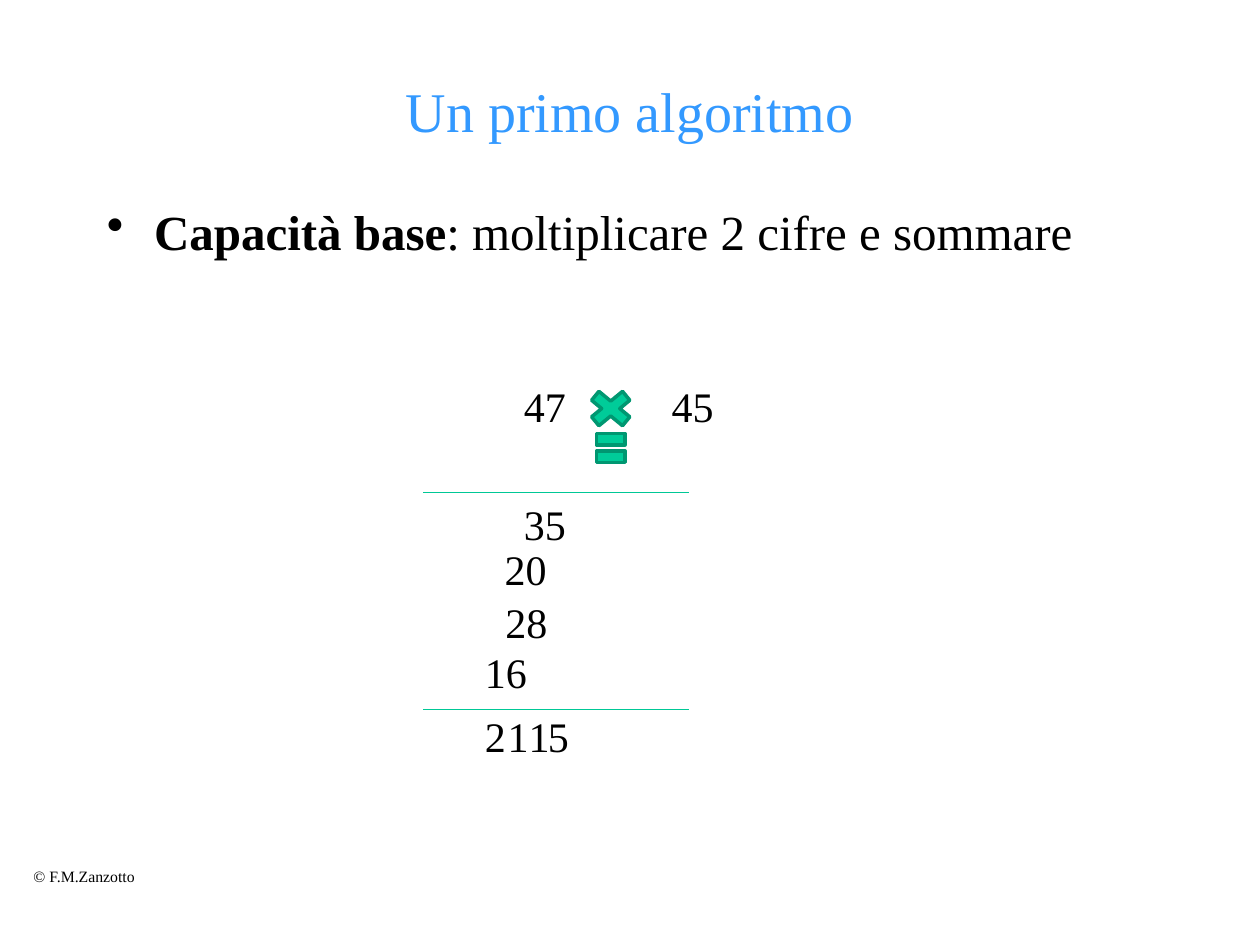
"""Build a slide that works through a long multiplication."""
from dataclasses import dataclass

from lxml import etree
from pptx import Presentation
from pptx.dml.color import RGBColor
from pptx.enum import shapes, text
from pptx.oxml import ns
from pptx.util import Pt


@dataclass(frozen=True)
class Theme:
    face: str = "Times New Roman"
    ink: str = "000000"
    head: str = "3399FF"
    fill: str = "00CC99"
    edge: str = "009771"
    rule: str = "00C896"
    title: int = 32
    body: int = 28
    digit: int = 24
    foot: int = 9


THEME = Theme()


def paint(font, size, tint=THEME.ink):
    font.name = THEME.face
    font.size = Pt(size)
    font.color.rgb = RGBColor.from_string(tint)


def add_title(slide, words):
    title = slide.shapes.title
    title.left, title.top, title.width, title.height = map(Pt, (54, 36, 612, 54))
    frame = title.text_frame
    frame.text = words
    frame.auto_size = text.MSO_AUTO_SIZE.NONE
    frame.vertical_anchor = text.MSO_ANCHOR.MIDDLE
    para = frame.paragraphs[0]
    para.alignment = text.PP_ALIGN.CENTER
    paint(para.font, THEME.title, THEME.head)


def add_bullet(slide, lead, rest):
    frame = slide.shapes.add_textbox(*map(Pt, (54, 108, 612, 55.5))).text_frame
    frame.word_wrap = True
    frame.margin_top = Pt(7)
    para = frame.paragraphs[0]
    props = para._p.get_or_add_pPr()
    props.set("marL", str(Pt(27)))
    props.set("indent", str(Pt(-27)))
    etree.SubElement(props, ns.qn("a:buChar")).set("char", "•")
    paint(para.font, THEME.body)
    for words, bold in ((lead, True), (rest, False)):
        run = para.add_run()
        run.text = words
        run.font.bold = bold


def add_label(slide, words, left, top, width, height=36, size=THEME.digit):
    frame = slide.shapes.add_textbox(*map(Pt, (left, top, width, height))).text_frame
    frame.word_wrap = False
    frame.auto_size = text.MSO_AUTO_SIZE.SHAPE_TO_FIT_TEXT
    frame.text = words
    paint(frame.paragraphs[0].font, size)


def add_rule(slide, top):
    line = slide.shapes.add_connector(
        shapes.MSO_CONNECTOR.STRAIGHT, *map(Pt, (242, top, 394, top)))
    line.line.color.rgb = RGBColor.from_string(THEME.rule)
    line.line.width = Pt(0.75)
    etree.SubElement(line._element.spPr, ns.qn("a:effectLst"))


def add_sign(slide, kind, left, top, width):
    sign = slide.shapes.add_shape(kind, *map(Pt, (left, top, width, 28)))
    sign.shadow.inherit = False
    sign.fill.solid()
    sign.fill.fore_color.rgb = RGBColor.from_string(THEME.fill)
    sign.line.color.rgb = RGBColor.from_string(THEME.edge)
    sign.line.width = Pt(2)


def main():
    deck = Presentation()
    deck.slide_width, deck.slide_height = Pt(720), Pt(540)
    slide = deck.slides.add_slide(deck.slide_layouts[5])
    add_title(slide, "Un primo algoritmo")
    add_bullet(slide, "Capacità base", ": moltiplicare 2 cifre e sommare")

    add_sign(slide, shapes.MSO_SHAPE.MATH_EQUAL, 338, 242, 22)
    add_sign(slide, shapes.MSO_SHAPE.MATH_MULTIPLY, 332, 219.5, 34)
    for top in (281.5, 405.5):
        add_rule(slide, top)

    numbers = (
        ("47", 292.3, 214), ("45", 376.7, 214), ("35", 292.3, 281.5),
        ("20", 281.3, 307), ("28", 281.8, 337.5), ("16", 270, 365.8))
    for words, left, top in numbers:
        add_label(slide, words, left, top, 39)
    for digit, left in zip("2115", (270, 283, 295, 306)):
        add_label(slide, digit, left, 402.5, 26.5)
    add_label(slide, "© F.M.Zanzotto", 12, 492, 73.5, 18, THEME.foot)
    deck.save("out.pptx")


if __name__ == "__main__":
    main()
